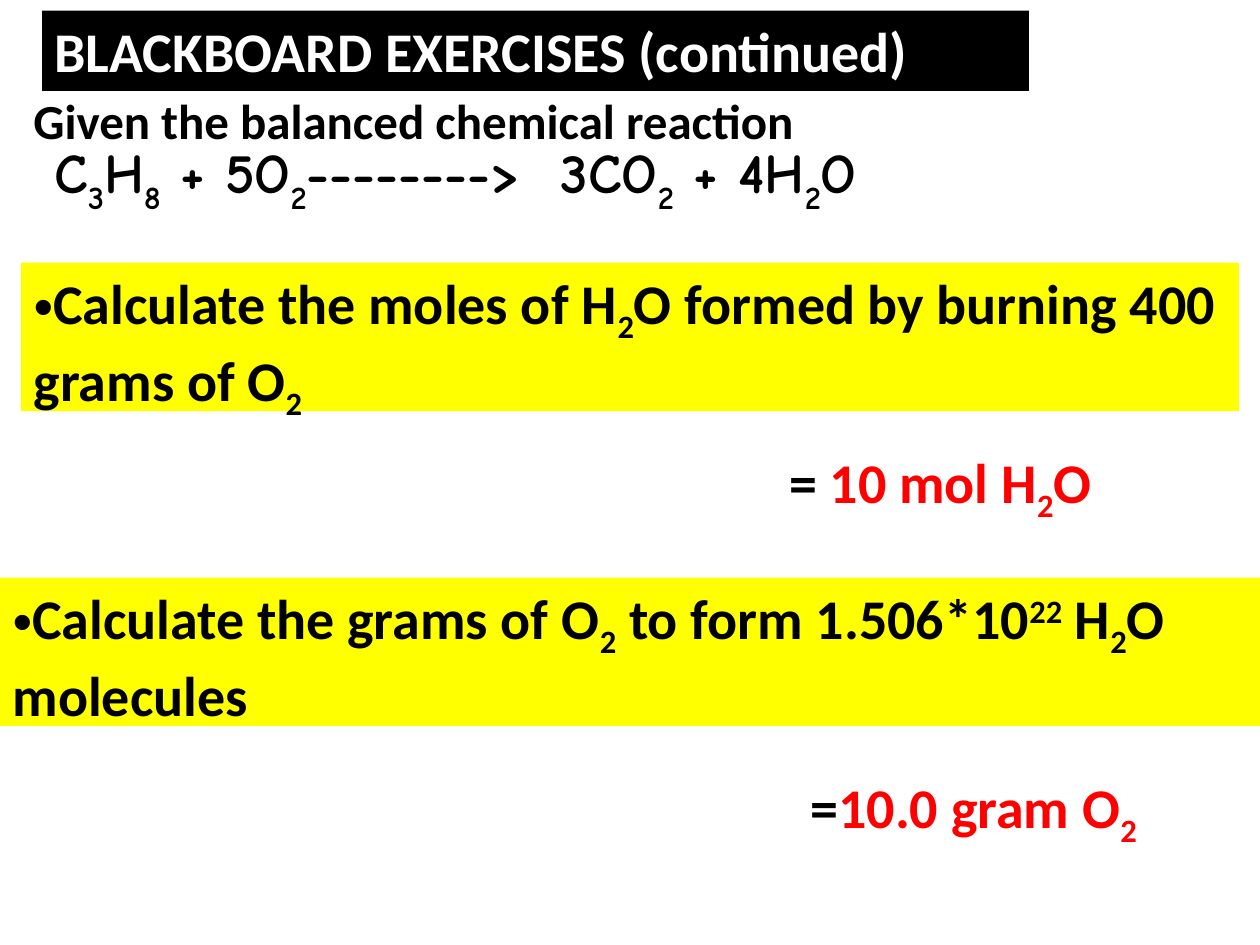
from lxml import etree
from pptx import Presentation
from pptx.dml.color import RGBColor
from pptx.enum.text import MSO_ANCHOR, MSO_AUTO_SIZE, PP_ALIGN
from pptx.oxml.ns import qn
from pptx.util import Pt

LEFT = PP_ALIGN.LEFT
TOP, MIDDLE = MSO_ANCHOR.TOP, MSO_ANCHOR.MIDDLE
NO_FIT = MSO_AUTO_SIZE.NONE
TWO_CONTENT = 3
COLORS = {"black": "000000", "white": "FFFFFF", "yellow": "FFFF00", "red": "FF0000"}


def format_box(sp, box, size=32, font="Calibri", anchor=TOP, fill=None):
    """Place and style a text shape; return its first paragraph."""
    sp.left, sp.top, sp.width, sp.height = (Pt(v) for v in box)
    if fill:
        sp.fill.solid()
        sp.fill.fore_color.rgb = RGBColor.from_string(COLORS[fill])
    tf = sp.text_frame
    tf.word_wrap = True
    tf.auto_size = NO_FIT
    tf.vertical_anchor = anchor
    p = tf.paragraphs[0]
    p.alignment = LEFT
    p.space_before = Pt(0)
    p.font.name, p.font.size, p.font.bold = font, Pt(size), True
    return p


def add_formula(p, text, color="black", drop=-25):
    """Add runs; parts between underscores are subscripts, or superscripts after ^."""
    for i, part in enumerate(text.split("_")):
        if not part:
            continue
        r = p.add_run()
        r.text = part.lstrip("^")
        r.font.color.rgb = RGBColor.from_string(COLORS[color])
        if i % 2:
            baseline = 30 if part.startswith("^") else drop
            r._r.get_or_add_rPr().set("baseline", str(baseline * 1000))


prs = Presentation()
prs.slide_width, prs.slide_height = Pt(720), Pt(540)
s = prs.slides.add_slide(prs.slide_layouts[TWO_CONTENT])
title, *questions = list(s.placeholders)[:3]

# Heading
p = format_box(title, (24, 6, 564, 46), fill="black")
add_formula(p, "BLACKBOARD EXERCISES (continued)", "white")

# Reaction
equation, intro = (s.shapes.add_textbox(0, 0, 0, 0) for _ in range(2))
p = format_box(equation, (24, 78, 660, 46), font="Comic Neue", anchor=MIDDLE)
add_formula(p, "C_3_H_8_ + 5O_2_-------->  3CO_2_ + 4H_2_O", drop=-30)
p = format_box(intro, (12, 48, 576, 41), size=28)
add_formula(p, "Given the balanced chemical reaction")

# Questions
QUESTIONS = [
    ((12, 150, 696, 85), "Calculate the moles of H_2_O formed by burning 400 grams of O_2_"),
    ((0, 330, 720, 85), "Calculate the grams of O_2_ to form 1.506*10_^22_ H_2_O molecules"),
]
for sp, (box, text) in zip(questions, QUESTIONS):
    p = format_box(sp, box, fill="yellow")
    add_formula(p, text)
    pPr = p._p.get_or_add_pPr()
    pPr.set("marL", "0")
    pPr.set("indent", "0")
    bullet = etree.Element(qn("a:buChar"), char="•")
    pPr.find(qn("a:defRPr")).addprevious(bullet)

# Answers
ANSWERS = [
    ((444, 252, 246, 46), "= ", "10 mol H_2_O"),
    ((456, 438, 222, 46), "=", "10.0 gram O_2_"),
]
for box, sign, result in ANSWERS:
    p = format_box(s.shapes.add_textbox(0, 0, 0, 0), box)
    add_formula(p, sign)
    add_formula(p, result, "red")

# Unused placeholders
for sp in list(s.placeholders):
    if not sp.text_frame.text:
        sp.element.getparent().remove(sp.element)

prs.save("out.pptx")
